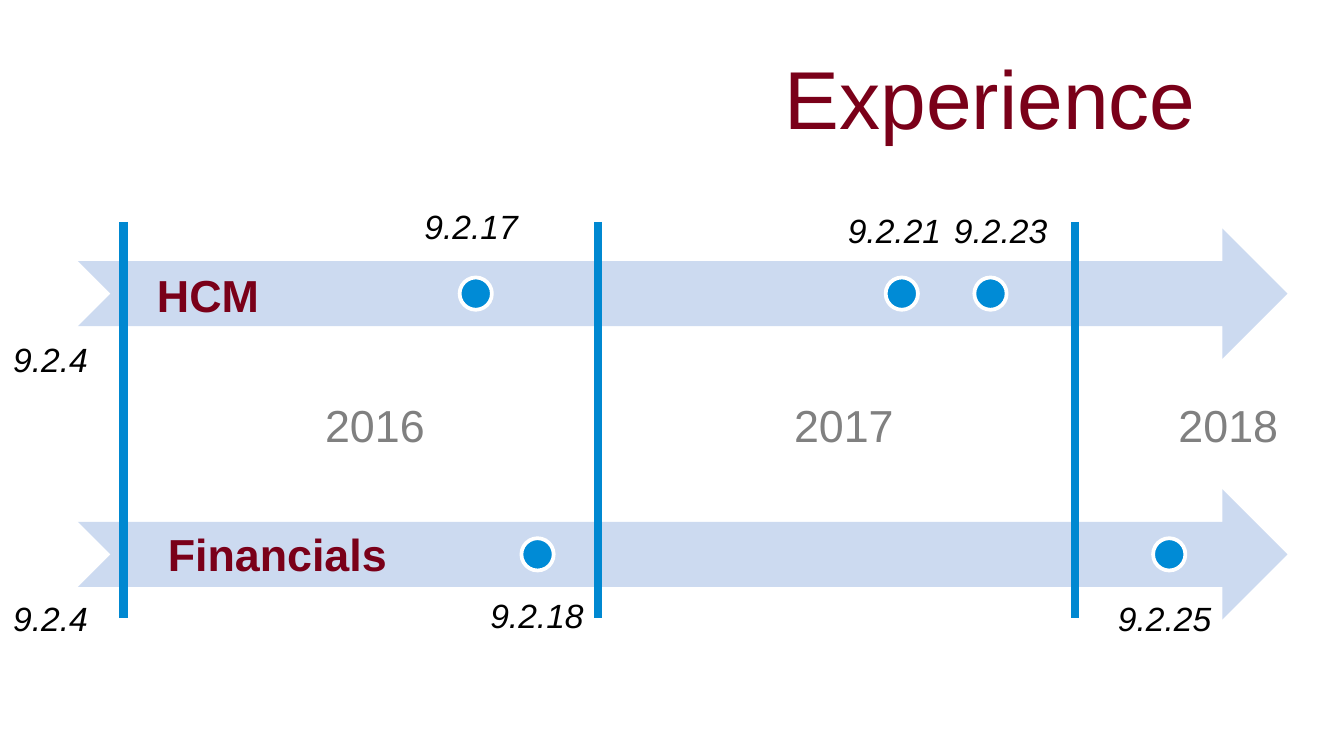
from dataclasses import dataclass

from lxml import etree
from pptx import Presentation
from pptx.dml.color import RGBColor
from pptx.enum.shapes import MSO_CONNECTOR, MSO_SHAPE
from pptx.enum.text import MSO_ANCHOR, MSO_AUTO_SIZE, PP_ALIGN
from pptx.oxml.ns import qn
from pptx.slide import Slide
from pptx.util import Inches, Pt

ARROW = MSO_SHAPE.NOTCHED_RIGHT_ARROW
DOT = MSO_SHAPE.OVAL
STRAIGHT = MSO_CONNECTOR.STRAIGHT
MIDDLE = MSO_ANCHOR.MIDDLE
RIGHT = PP_ALIGN.RIGHT
GROW = MSO_AUTO_SIZE.SHAPE_TO_FIT_TEXT

FONT = "Arial"
MAROON, GRAY, BLACK, WHITE = "7A0019", "808080", "000000", "FFFFFF"
BAND, DOT_BLUE, LINE_BLUE = "CCDAF0", "008BD6", "0088D1"
SLIDE_WIDTH = 10
ARROW_LEFT, ARROW_WIDTH, ARROW_HEIGHT = 0.58, 9, 0.97
DOT_SIZE = 0.24


@dataclass
class Label:
    text: str
    left: float
    top: float
    width: float


@dataclass
class Track:
    top: float
    name: Label
    dots: list[float]
    versions: list[Label]


TRACKS = [
    Track(3.64, Label("Financials", 1.15, 3.87, 1.85), [3.88, 8.58],
          [Label("9.2.4", 0, 4.4, 0.76), Label("9.2.18", 3.55, 4.38, 0.9),
           Label("9.2.25", 8.22, 4.4, 0.9)]),
    Track(1.7, Label("HCM", 1.07, 1.94, 0.97), [3.42, 6.59, 7.25],
          [Label("9.2.4", 0, 2.47, 0.76), Label("9.2.17", 3.06, 1.48, 0.9),
           Label("9.2.21", 6.21, 1.51, 0.9), Label("9.2.23", 7, 1.51, 0.9)]),
]
YEARS = [Label("2016", 2.32, 2.91, 1.08), Label("2017", 5.81, 2.91, 1),
         Label("2018", 8.67, 2.91, 1.25)]
YEAR_LINES = [0.92, 4.45, 8]


def rgb(color: str) -> RGBColor:
    return RGBColor.from_string(color)


def add_run(p, text: str, size: float, color: str,
            bold: bool = False, italic: bool = False) -> None:
    r = p.add_run()
    r.text = text
    r.font.name = FONT
    r.font.size = Pt(size)
    r.font.bold = bold
    r.font.italic = italic
    r.font.color.rgb = rgb(color)


def add_title(s: Slide, text: str) -> None:
    sp = s.shapes.title
    sp.left, sp.top = Inches(0.92), Inches(0.25)
    sp.width, sp.height = Inches(8.08), Inches(0.94)
    tf = sp.text_frame
    tf.vertical_anchor = MIDDLE
    p = tf.paragraphs[0]
    p.alignment = RIGHT
    add_run(p, text, 44, MAROON)


def add_label(s: Slide, label: Label, size: float, color: str, wrap: bool = False,
              bold: bool = False, italic: bool = False) -> None:
    height = 0.5 if size > 18 else 0.4
    sp = s.shapes.add_textbox(Inches(label.left), Inches(label.top),
                              Inches(label.width), Inches(height))
    tf = sp.text_frame
    tf.word_wrap = wrap
    tf.auto_size = GROW
    add_run(tf.paragraphs[0], label.text, size, color, bold, italic)


def add_track(s: Slide, track: Track) -> None:
    """Draw the arrow of a track and the dots centred on it."""
    group = s.shapes.add_group_shape()
    sp = group.shapes.add_shape(ARROW, Inches(ARROW_LEFT), Inches(track.top),
                                Inches(ARROW_WIDTH), Inches(ARROW_HEIGHT))
    sp.shadow.inherit = False
    sp.fill.solid()
    sp.fill.fore_color.rgb = rgb(BAND)
    sp.line.fill.background()
    dot_top = track.top + (ARROW_HEIGHT - DOT_SIZE) / 2
    for left in track.dots:
        sp = group.shapes.add_shape(DOT, Inches(left), Inches(dot_top),
                                    Inches(DOT_SIZE), Inches(DOT_SIZE))
        sp.shadow.inherit = False
        sp.fill.solid()
        sp.fill.fore_color.rgb = rgb(DOT_BLUE)
        sp.line.color.rgb = rgb(WHITE)
        sp.line.width = Pt(2)


def add_year_line(s: Slide, x: float) -> None:
    line = s.shapes.add_connector(STRAIGHT, Inches(x), Inches(1.65),
                                  Inches(x), Inches(4.6))
    line.line.color.rgb = rgb(LINE_BLUE)
    line.line.width = Pt(4.5)
    etree.SubElement(line._element.spPr, qn("a:effectLst"))


def main() -> None:
    prs = Presentation()
    prs.slide_width = Inches(SLIDE_WIDTH)
    prs.slide_height = Inches(SLIDE_WIDTH * 9 / 16)
    s = prs.slides.add_slide(prs.slide_layouts[5])
    add_title(s, "Experience")
    for track in TRACKS:
        add_track(s, track)
    for x in YEAR_LINES:
        add_year_line(s, x)
    for year in YEARS:
        add_label(s, year, 24, GRAY, wrap=True)
    for track in TRACKS:
        add_label(s, track.name, 24, MAROON, bold=True)
        for version in track.versions:
            add_label(s, version, 18, BLACK, italic=True)
    prs.save("out.pptx")


if __name__ == "__main__":
    main()
